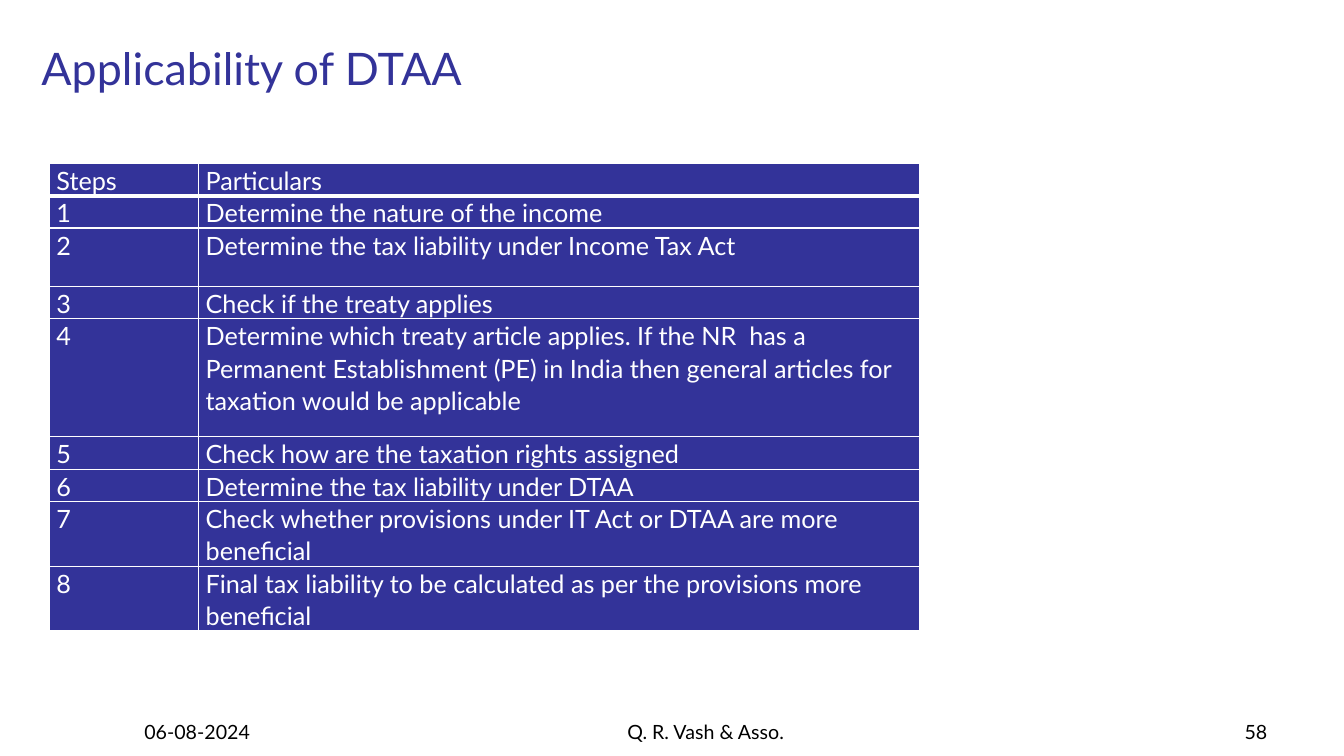
import dataclasses

import lxml.etree
import pptx
import pptx.dml.color
import pptx.enum.text
import pptx.oxml.ns
import pptx.util

FONT = "Lato"
INDIGO, WHITE, BLACK = "333399", "FFFFFF", "000000"
ALIGN = pptx.enum.text.PP_ALIGN
ANCHOR = pptx.enum.text.MSO_ANCHOR
SLIDE_WIDTH = pptx.util.Inches(13.33)
SLIDE_HEIGHT = pptx.util.Inches(7.5)


@dataclasses.dataclass(frozen=True)
class FooterPart:
    """A footer text; left and width are percentages of the slide."""
    text: str
    left: float
    width: float
    align: ALIGN


@dataclasses.dataclass(frozen=True)
class Step:
    """A table row; height is a percentage of the slide."""
    label: str
    particulars: str
    height: float


ONE_LINE, TWO_LINES, FOUR_LINES = 3.73, 7.73, 15.6
COLUMN_WIDTHS = (11.1, 53.64)

FOOTER = (
    FooterPart("06-08-2024", 10, 20.85, ALIGN.LEFT),
    FooterPart("Q. R. Vash & Asso.", 36.68, 31.66, ALIGN.CENTER),
    FooterPart("58", 74.19, 20.85, ALIGN.RIGHT),
)

STEPS = (
    Step("Steps", "Particulars", ONE_LINE),
    Step("1", "Determine the nature of the income", ONE_LINE),
    Step("2", "Determine the tax liability under Income Tax Act", TWO_LINES),
    Step("3", "Check if the treaty applies", ONE_LINE),
    Step("4", "Determine which treaty article applies. If the NR  has a Permanent "
         "Establishment (PE) in India then general articles for taxation would be "
         "applicable", FOUR_LINES),
    Step("5", "Check how are the taxation rights assigned", ONE_LINE),
    Step("6", "Determine the tax liability under DTAA", ONE_LINE),
    Step("7", "Check whether provisions under IT Act or DTAA are more beneficial",
         TWO_LINES),
    Step("8", "Final tax liability to be calculated as per the provisions more "
         "beneficial", TWO_LINES),
)


def across(percent: float) -> int:
    return round(SLIDE_WIDTH * percent / 100)


def down(percent: float) -> int:
    return round(SLIDE_HEIGHT * percent / 100)


def color(value: str) -> pptx.dml.color.RGBColor:
    return pptx.dml.color.RGBColor.from_string(value)


def write(frame, text: str, size: int, ink: str, align: ALIGN = ALIGN.LEFT):
    """Fill a text frame with one formatted paragraph."""
    frame.word_wrap = True
    paragraph = frame.paragraphs[0]
    paragraph.text = text
    paragraph.alignment = align
    paragraph.font.name = FONT
    paragraph.font.size = pptx.util.Pt(size)
    paragraph.font.bold = False
    paragraph.font.color.rgb = color(ink)
    return paragraph


def add_border(cell, side: str, points: float) -> None:
    properties = cell._tc.get_or_add_tcPr()
    line = lxml.etree.SubElement(properties, pptx.oxml.ns.qn(f"a:ln{side}"),
                                 w=str(pptx.util.Pt(points)))
    fill = lxml.etree.SubElement(line, pptx.oxml.ns.qn("a:solidFill"))
    lxml.etree.SubElement(fill, pptx.oxml.ns.qn("a:srgbClr"), val=WHITE)


def format_cell(cell, text: str, top: float, bottom: float) -> None:
    for side, points in (("L", 1), ("R", 1), ("T", top), ("B", bottom)):
        add_border(cell, side, points)
    cell.fill.solid()
    cell.fill.fore_color.rgb = color(INDIGO)
    cell.margin_left = cell.margin_right = pptx.util.Inches(0.07)
    cell.margin_top = cell.margin_bottom = 0
    write(cell.text_frame, text, 18, WHITE).line_spacing = 1.07


def add_title(slide) -> None:
    title = slide.shapes.title
    title.left, title.top = across(2.33), down(4.67)
    title.width, title.height = across(43.14), down(7.73)
    title.text_frame.auto_size = pptx.enum.text.MSO_AUTO_SIZE.NONE
    title.text_frame.vertical_anchor = ANCHOR.TOP
    write(title.text_frame, "Applicability of DTAA", 32, INDIGO)


def add_steps(slide) -> None:
    table = slide.shapes.add_table(
        len(STEPS), len(COLUMN_WIDTHS), across(3.68), down(21.6),
        across(sum(COLUMN_WIDTHS)), down(sum(step.height for step in STEPS))).table
    table.first_row = table.horz_banding = False
    for column, width in zip(table.columns, COLUMN_WIDTHS):
        column.width = across(width)
    for index, step in enumerate(STEPS):
        table.rows[index].height = down(step.height)
        # The heading is set off by a thicker rule
        top = 3 if index == 1 else 1
        bottom = 3 if index == 0 else 1
        for cell, text in zip(table.rows[index].cells, (step.label, step.particulars)):
            format_cell(cell, text, top, bottom)


def add_footer(slide, part: FooterPart) -> None:
    frame = slide.shapes.add_textbox(across(part.left), down(92.27),
                                     across(part.width), down(6.67)).text_frame
    frame.vertical_anchor = ANCHOR.BOTTOM
    write(frame, part.text, 14, BLACK, part.align)


def main() -> None:
    deck = pptx.Presentation()
    deck.slide_width, deck.slide_height = SLIDE_WIDTH, SLIDE_HEIGHT
    slide = deck.slides.add_slide(deck.slide_layouts.get_by_name("Title Only"))
    # Title, table of steps, footer
    add_title(slide)
    add_steps(slide)
    for part in FOOTER:
        add_footer(slide, part)
    deck.save("out.pptx")


if __name__ == "__main__":
    main()
